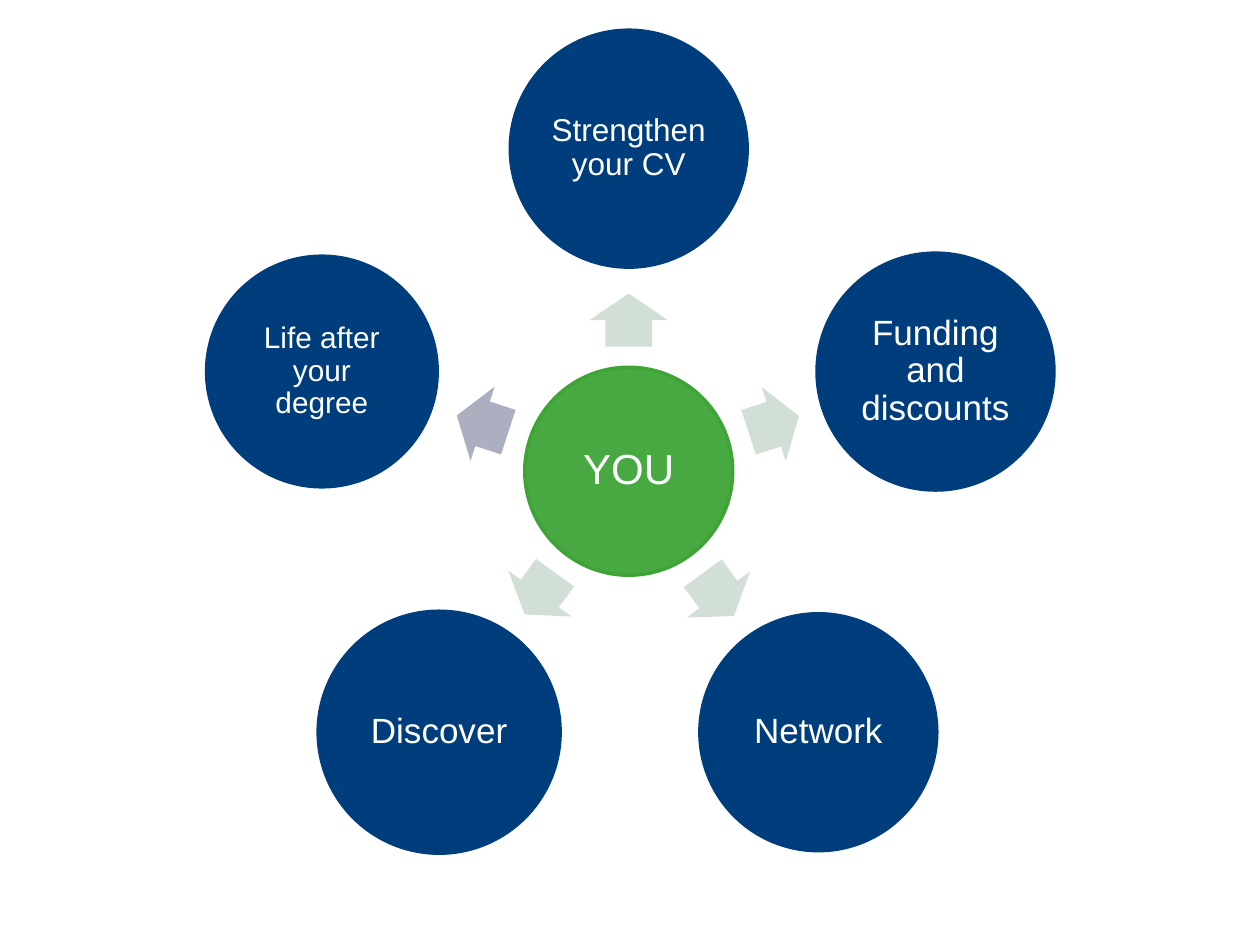
from dataclasses import dataclass
from math import cos, radians, sin

from pptx import Presentation
from pptx.dml.color import RGBColor
from pptx.enum.shapes import MSO_SHAPE
from pptx.enum.text import MSO_ANCHOR, PP_ALIGN
from pptx.util import Inches, Pt

OVAL, ARROW = MSO_SHAPE.OVAL, MSO_SHAPE.RIGHT_ARROW
MIDDLE, CENTER = MSO_ANCHOR.MIDDLE, PP_ALIGN.CENTER

GREEN = RGBColor(0x48, 0xA9, 0x42)
GREEN_EDGE = RGBColor(0x3E, 0xA4, 0x36)
NAVY = RGBColor(0x00, 0x3D, 0x7D)
SAGE = RGBColor(0xD1, 0xDF, 0xD6)
GREY = RGBColor(0xAB, 0xAF, 0xBF)
WHITE = RGBColor(0xFF, 0xFF, 0xFF)

HUB_X, HUB_Y = 4.99, 3.74
SPOKE_RADIUS = 2.56
ARROW_HEIGHT = 0.62


@dataclass
class Spoke:
    label: str
    diameter: float
    font_size: int
    arrow_radius: float
    arrow_length: float = 0.42
    arrow_color: RGBColor = SAGE


# Clockwise from the top
SPOKES = [
    Spoke("Strengthen your CV", 1.88, 18, 1.2),
    Spoke("Funding and discounts", 1.88, 20, 1.21),
    Spoke("Network", 1.88, 20, 1.21),
    Spoke("Discover", 1.92, 20, 1.2, 0.41),
    Spoke("Life after your degree", 1.83, 17, 1.22, 0.43, GREY),
]


def add_centred(s, kind, radius: float, angle: float, width: float,
                height: float, fill: RGBColor):
    """Add a shape centred at a polar position around the hub."""
    x = HUB_X + radius * cos(radians(angle))
    y = HUB_Y + radius * sin(radians(angle))
    sp = s.shapes.add_shape(kind, Inches(x - width / 2), Inches(y - height / 2),
                            Inches(width), Inches(height))
    sp.shadow.inherit = False
    sp.fill.solid()
    sp.fill.fore_color.rgb = fill
    return sp


def add_circle(s, label: str, radius: float, angle: float, diameter: float,
               font_size: int, fill: RGBColor, edge: RGBColor) -> None:
    sp = add_centred(s, OVAL, radius, angle, diameter, diameter, fill)
    sp.line.color.rgb = edge
    sp.line.width = Pt(2)
    tf = sp.text_frame
    tf.word_wrap = True
    tf.vertical_anchor = MIDDLE
    tf.margin_left = tf.margin_right = Inches(0.03)
    tf.margin_top = tf.margin_bottom = Inches(0.03)
    tf.text = label
    p = tf.paragraphs[0]
    p.alignment = CENTER
    p.line_spacing = 0.9
    font = p.runs[0].font
    font.name, font.size = "Arial", Pt(font_size)
    font.color.rgb = WHITE


def add_arrow(s, spoke: Spoke, angle: float) -> None:
    sp = add_centred(s, ARROW, spoke.arrow_radius, angle, spoke.arrow_length,
                     ARROW_HEIGHT, spoke.arrow_color)
    sp.line.fill.background()
    sp.adjustments[0], sp.adjustments[1] = 0.6, 0.5
    sp.rotation = angle % 360


def main() -> None:
    prs = Presentation()
    prs.slide_width, prs.slide_height = Inches(10), Inches(7.5)
    s = prs.slides.add_slide(prs.slide_layouts[6])

    # Hub
    add_circle(s, "YOU", 0, 0, 1.65, 24, GREEN, GREEN_EDGE)

    # Spokes at equal angles, each with an arrow pointing outwards
    for i, spoke in enumerate(SPOKES):
        angle = -90 + i * 360 / len(SPOKES)
        add_arrow(s, spoke, angle)
        add_circle(s, spoke.label, SPOKE_RADIUS, angle, spoke.diameter,
                   spoke.font_size, NAVY, NAVY)

    prs.save("out.pptx")


if __name__ == "__main__":
    main()
